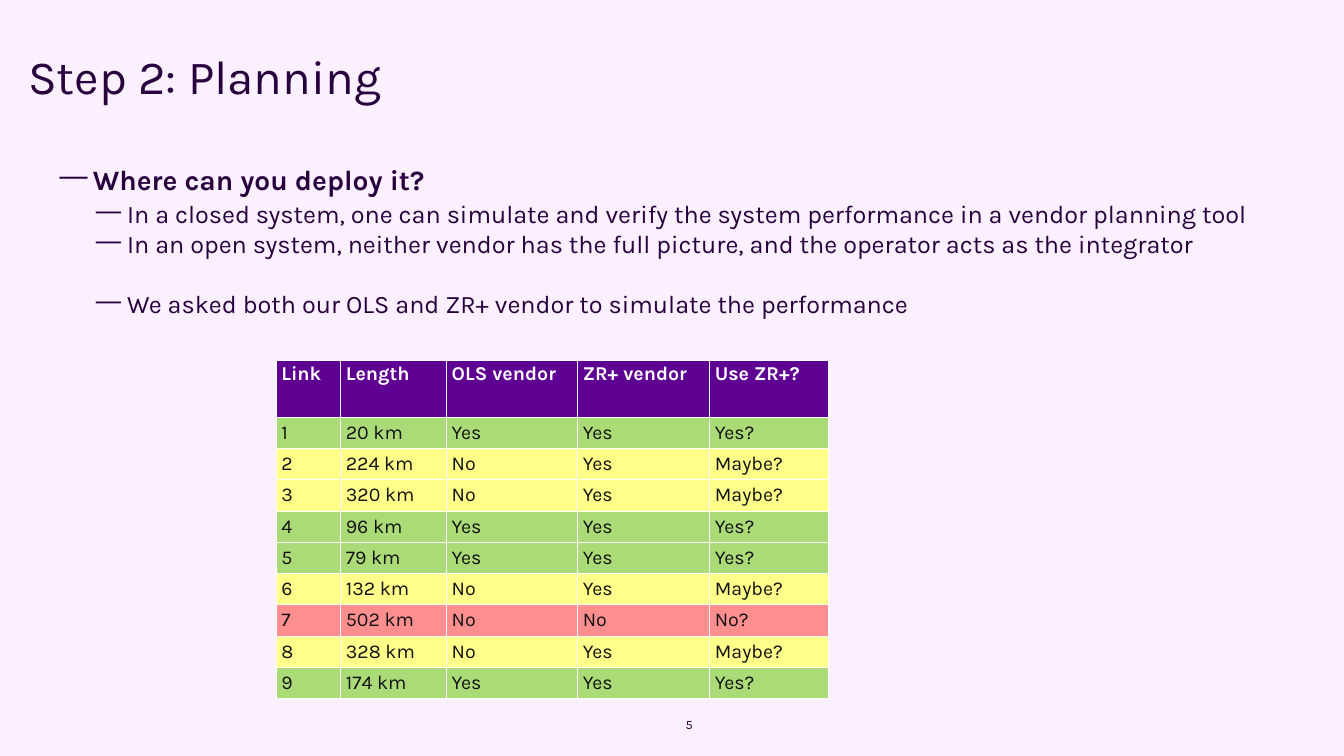
from dataclasses import dataclass

from lxml.etree import SubElement
from pptx import Presentation
from pptx.dml.color import RGBColor
from pptx.enum.text import MSO_ANCHOR, PP_ALIGN
from pptx.oxml.ns import qn
from pptx.util import Inches, Pt

TITLE = "Step 2: Planning"
PAGE_NUMBER = "5"
QUESTION = "Where can you deploy it?"
ANSWERS = [
    "In a closed system, one can simulate and verify the system performance in a vendor planning tool",
    "In an open system, neither vendor has the full picture, and the operator acts as the integrator",
    "We asked both our OLS and ZR+ vendor to simulate the performance",
]
HEADINGS = ("Link", "Length", "OLS vendor", "ZR+ vendor", "Use ZR+?")
LINKS = [
    ("1", "20 km", "Yes", "Yes", "Yes?"),
    ("2", "224 km", "No", "Yes", "Maybe?"),
    ("3", "320 km", "No", "Yes", "Maybe?"),
    ("4", "96 km", "Yes", "Yes", "Yes?"),
    ("5", "79 km", "Yes", "Yes", "Yes?"),
    ("6", "132 km", "No", "Yes", "Maybe?"),
    ("7", "502 km", "No", "No", "No?"),
    ("8", "328 km", "No", "Yes", "Maybe?"),
    ("9", "174 km", "Yes", "Yes", "Yes?"),
]
COLUMN_WIDTHS = (0.64, 1.05, 1.3, 1.31, 1.18)
HEADING_HEIGHT = 0.57
LINK_HEIGHT = 0.31


@dataclass(frozen=True)
class Theme:
    font: str = "Karla"
    background: str = "FBF0FF"
    ink: str = "29003E"
    heading_fill: str = "5E0092"
    heading_ink: str = "FFFFFF"
    cell_ink: str = "121214"
    border: str = "FFFFFF"
    title_size: int = 34
    question_size: int = 20
    answer_size: int = 18
    table_size: int = 14
    page_size: int = 9


THEME = Theme()
VERDICT_FILLS = {"Yes?": "ABDB77", "Maybe?": "FFFF89", "No?": "FF8F8F"}


def format_runs(paragraph, size, color=THEME.ink, bold=False):
    for run in paragraph.runs:
        run.font.name = THEME.font
        run.font.size = Pt(size)
        run.font.bold = bold
        run.font.color.rgb = RGBColor.from_string(color)


def prepare_frame(frame, anchor=MSO_ANCHOR.TOP):
    frame.word_wrap = True
    frame.vertical_anchor = anchor
    frame.margin_left = frame.margin_right = frame.margin_top = frame.margin_bottom = 0


def add_dash(paragraph, left, hanging):
    properties = paragraph._p.get_or_add_pPr()
    properties.set("marL", str(Inches(left)))
    properties.set("indent", str(-Inches(hanging)))
    SubElement(properties, qn("a:buChar"), char="—")


def add_borders(cell):
    properties = cell._tc.get_or_add_tcPr()
    for side in ("lnL", "lnR", "lnT", "lnB"):
        line = SubElement(properties, qn(f"a:{side}"), w=str(Pt(0.5)))
        SubElement(SubElement(line, qn("a:solidFill")), qn("a:srgbClr"), val=THEME.border)


def fill_row(cells, values, fill, ink, bold, anchor):
    for cell, value in zip(cells, values):
        cell.margin_left = cell.margin_right = Inches(0.05)
        cell.margin_top = cell.margin_bottom = Inches(0.03)
        cell.vertical_anchor = anchor
        add_borders(cell)
        cell.fill.solid()
        cell.fill.fore_color.rgb = RGBColor.from_string(fill)
        cell.text_frame.text = value
        format_runs(cell.text_frame.paragraphs[0], THEME.table_size, ink, bold)


def add_title(slide):
    title = slide.shapes.title
    title.left, title.top, title.width, title.height = map(Inches, (0.28, 0.55, 12.77, 1.01))
    prepare_frame(title.text_frame)
    title.text_frame.text = TITLE
    heading = title.text_frame.paragraphs[0]
    heading.alignment = PP_ALIGN.LEFT
    heading.line_spacing = 0.86
    format_runs(heading, THEME.title_size)


def add_points(slide):
    points = slide.shapes.add_textbox(*map(Inches, (0.59, 1.59, 11.99, 2.7))).text_frame
    prepare_frame(points)
    question = points.paragraphs[0]
    question.text = QUESTION
    question.line_spacing = 1.06
    question.space_after = Pt(4)
    add_dash(question, 0.33, 0.33)
    format_runs(question, THEME.question_size, bold=True)
    for text in ANSWERS:
        answer = points.add_paragraph()
        answer.text = text
        answer.level = 1
        answer.line_spacing = 0.9
        answer.space_before = Pt(21.4 if text == ANSWERS[-1] else 0)
        answer.space_after = Pt(2)
        add_dash(answer, 0.67, 0.31)
        format_runs(answer, THEME.answer_size)


def add_links(slide):
    row_heights = [HEADING_HEIGHT] + [LINK_HEIGHT] * len(LINKS)
    links = slide.shapes.add_table(
        len(row_heights), len(HEADINGS), Inches(2.74), Inches(3.57),
        Inches(sum(COLUMN_WIDTHS)), Inches(sum(row_heights)),
    ).table
    links.first_row = links.horz_banding = False
    for column, width in zip(links.columns, COLUMN_WIDTHS):
        column.width = Inches(width)
    for row, height in zip(links.rows, row_heights):
        row.height = Inches(height)
    heading_row, *link_rows = links.rows
    fill_row(heading_row.cells, HEADINGS, THEME.heading_fill, THEME.heading_ink, True, MSO_ANCHOR.TOP)
    for row, link in zip(link_rows, LINKS):
        fill_row(row.cells, link, VERDICT_FILLS[link[-1]], THEME.cell_ink, False, MSO_ANCHOR.MIDDLE)


def add_page_number(slide):
    page = slide.shapes.add_textbox(*map(Inches, (6.8, 7.02, 0.81, 0.24))).text_frame
    prepare_frame(page, MSO_ANCHOR.BOTTOM)
    page.text = PAGE_NUMBER
    format_runs(page.paragraphs[0], THEME.page_size)


def main():
    presentation = Presentation()
    presentation.slide_width = Inches(13.33)
    presentation.slide_height = Inches(7.5)
    slide = presentation.slides.add_slide(presentation.slide_layouts[5])
    slide.background.fill.solid()
    slide.background.fill.fore_color.rgb = RGBColor.from_string(THEME.background)
    add_title(slide)
    add_points(slide)
    add_page_number(slide)
    add_links(slide)
    presentation.save("out.pptx")


if __name__ == "__main__":
    main()
